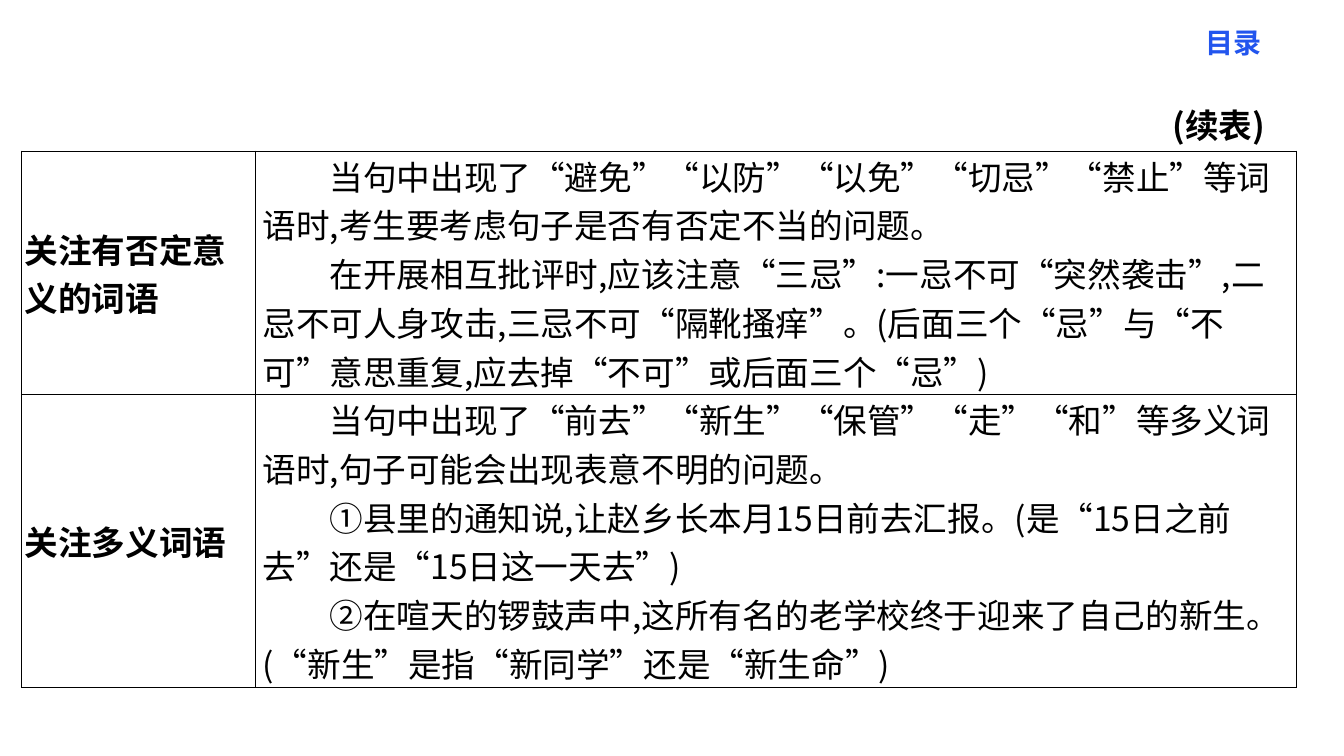
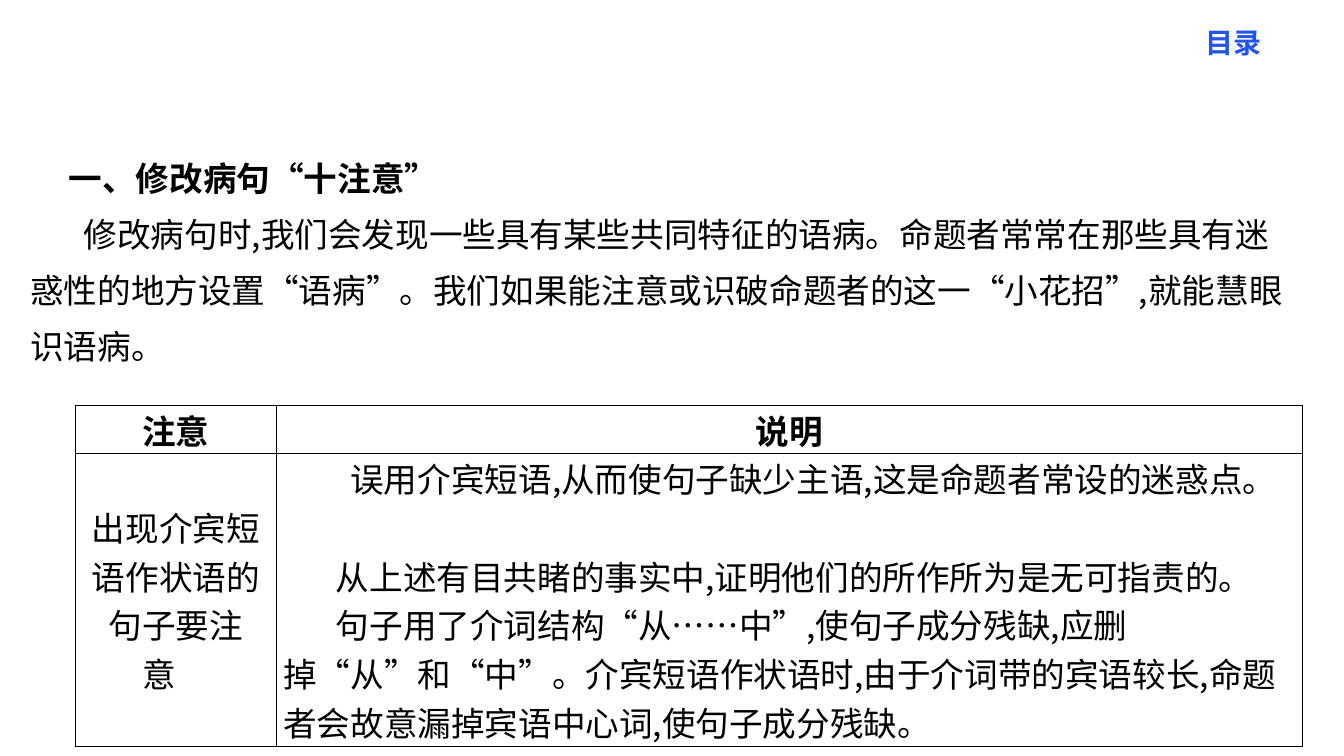
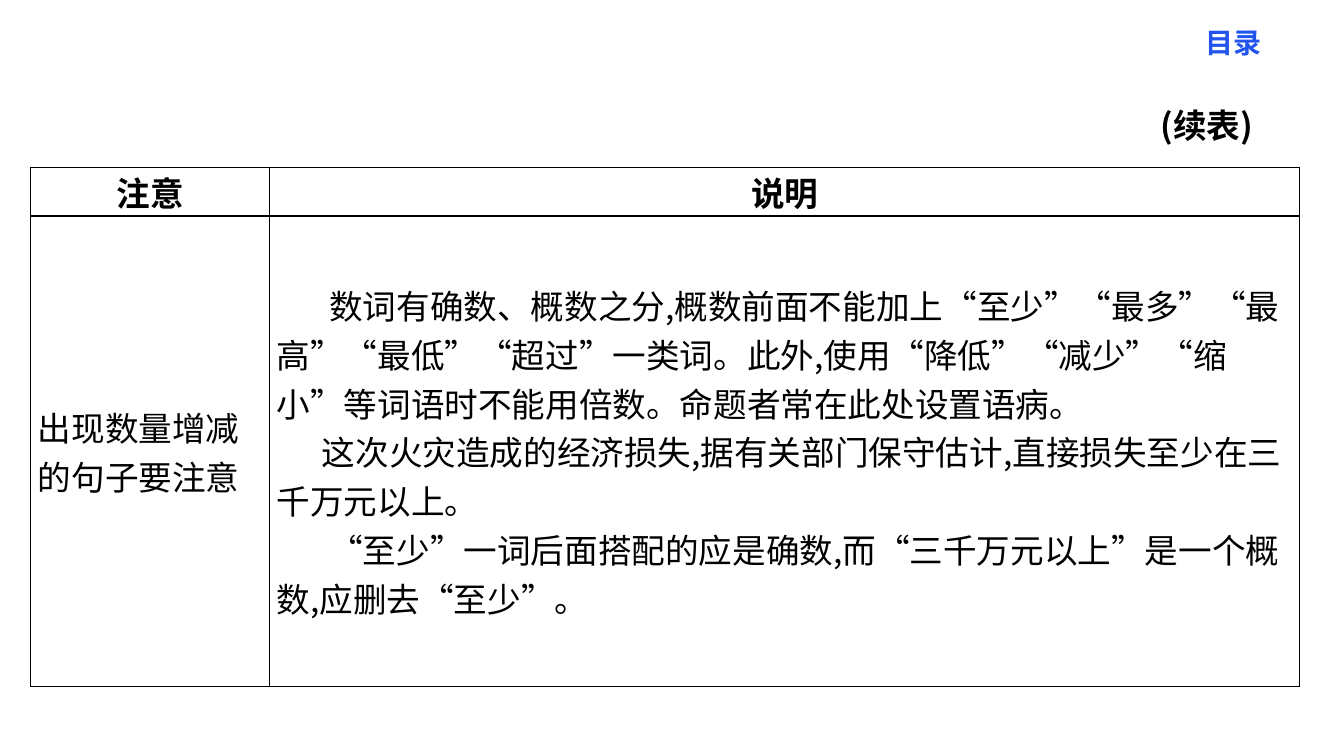
import pptx
import pptx.util
import pptx.dml.color
import pptx.enum.text
import pptx.enum.lang
import pptx.oxml
import pptx.oxml.ns

Pt = pptx.util.Pt
ALIGN = pptx.enum.text.PP_ALIGN
MIDDLE = pptx.enum.text.MSO_ANCHOR.MIDDLE
FONT, BLACK, BLUE = "Noto Sans CJK SC", "000000", "2255EE"
HEADER = ("注意", "说明")
LINE = 34.8

SLIDES = [
    dict(
        continued_right=903.5,
        table=dict(
            at=(15.5, 108), cols=(167, 743.8), rows=(5 * LINE, 6 * LINE),
            label=dict(bold=True), label_inset=2.16,
            cells=[
                ("关注有否定意义的词语", [
                    ("当句中出现了“避免”“以防”“以免”“切忌”“禁止”等词语时,考生要考虑句子是否有否定不当的问题。", dict(indent=48)),
                    ("在开展相互批评时,应该注意“三忌”:一忌不可“突然袭击”,二忌不可人身攻击,三忌不可“隔靴搔痒”。(后面三个“忌”与“不可”意思重复,应去掉“不可”或后面三个“忌”)", dict(indent=48)),
                ]),
                ("关注多义词语", [
                    ("当句中出现了“前去”“新生”“保管”“走”“和”等多义词语时,句子可能会出现表意不明的问题。", dict(indent=48)),
                    ("①县里的通知说,让赵乡长本月15日前去汇报。(是“15日之前去”还是“15日这一天去”)", dict(indent=48)),
                    ("②在喧天的锣鼓声中,这所有名的老学校终于迎来了自己的新生。(“新生”是指“新同学”还是“新生命”)", dict(indent=48)),
                ]),
            ],
        ),
    ),
    dict(
        intro=[
            ("一、修改病句“十注意”", dict(bold=True, indent=27.5, spacing=43.2)),
            ("修改病句时,我们会发现一些具有某些共同特征的语病。命题者常常在那些具有迷惑性的地方设置“语病”。我们如果能注意或识破命题者的这一“小花招”,就能慧眼识语病。",
             dict(indent=38.2, spacing=40)),
        ],
        table=dict(
            at=(54, 289.4), cols=(143.3, 733), rows=(LINE, 6 * LINE), header=True,
            label=dict(align=ALIGN.CENTER), label_inset=0,
            cells=[
                ("出现介宾短语作状语的句子要注意　", [
                    ("误用介宾短语,从而使句子缺少主语,这是命题者常设的迷惑点。", dict(indent=48, after=LINE)),
                    ("从上述有目共睹的事实中,证明他们的所作所为是无可指责的。", dict(indent=37.6)),
                    ("句子用了介词结构“从……中”,使句子成分残缺,应删掉“从”和“中”。介宾短语作状语时,由于介词带的宾语较长,命题者会故意漏掉宾语中心词,使句子成分残缺。", dict(indent=37.6)),
                ]),
            ],
        ),
    ),
    dict(
        continued_right=895,
        table=dict(
            at=(22, 119.5), cols=(170.6, 735.8), rows=(LINE, 336.2), header=True,
            label={}, label_inset=5.04,
            cells=[
                ("出现数量增减的句子要注意", [
                    ("数词有确数、概数之分,概数前面不能加上“至少”“最多”“最高”“最低”“超过”一类词。此外,使用“降低”“减少”“缩小”等词语时不能用倍数。命题者常在此处设置语病。", dict(indent=37.6)),
                    ("这次火灾造成的经济损失,据有关部门保守估计,直接损失至少在三千万元以上。", dict(indent=32.3)),
                    ("“至少”一词后面搭配的应是确数,而“三千万元以上”是一个概数,应删去“至少”。", dict(indent=37.6)),
                ]),
            ],
        ),
    ),
]


def rgb(value):
    """Turn a hex string into a colour."""
    return pptx.dml.color.RGBColor.from_string(value)


def write(tf, text, first=True, size=24, color=BLACK, bold=False,
          align=ALIGN.LEFT, indent=0, spacing=None, after=0):
    """Write one formatted paragraph into a text frame."""
    p = tf.paragraphs[0] if first else tf.add_paragraph()
    p.alignment = align
    if spacing:
        p.line_spacing = Pt(spacing)
    if after:
        p.space_after = Pt(after)
    if indent:
        p._p.get_or_add_pPr().set("indent", str(Pt(indent)))
    r = p.add_run()
    r.text = text
    r.font.size, r.font.bold, r.font.name = Pt(size), bold, FONT
    r.font.color.rgb = rgb(color)
    r.font.language_id = pptx.enum.lang.MSO_LANGUAGE_ID.SIMPLIFIED_CHINESE
    rPr = r._r.get_or_add_rPr()
    rPr.append(rPr.makeelement(pptx.oxml.ns.qn("a:ea"), {"typeface": FONT}))


def text_box(s, left, top, width, height):
    """Add a wrapping text box without insets and return its frame."""
    tf = s.shapes.add_textbox(Pt(left), Pt(top), Pt(width), Pt(height)).text_frame
    tf.word_wrap = True
    tf.margin_left = tf.margin_right = tf.margin_top = tf.margin_bottom = 0
    return tf


def write_all(tf, paragraphs):
    """Write a list of text and format pairs into a text frame."""
    for i, (text, style) in enumerate(paragraphs):
        write(tf, text, first=i == 0, **style)


def format_cell(cell, inset):
    """Give a cell its insets, empty fill and thin black borders."""
    cell.margin_left = cell.margin_right = Pt(inset)
    cell.margin_top = cell.margin_bottom = 0
    cell.vertical_anchor = MIDDLE
    tcPr = cell._tc.get_or_add_tcPr()
    for side in ("lnL", "lnR", "lnT", "lnB"):
        tcPr.append(pptx.oxml.parse_xml(
            f'<a:{side} {pptx.oxml.ns.nsdecls("a")} w="{Pt(1)}"><a:solidFill>'
            f'<a:srgbClr val="{BLACK}"/></a:solidFill></a:{side}>'))
    cell.fill.background()


def add_notes_table(s, at, cols, rows, cells, label, label_inset, header=False):
    """Add a two-column table of labels and explanations."""
    table = s.shapes.add_table(len(rows), len(cols), Pt(at[0]), Pt(at[1]),
                               Pt(sum(cols)), Pt(sum(rows))).table
    table.first_row = table.horz_banding = False
    for column, width in zip(table.columns, cols):
        column.width = Pt(width)
    for row, height in zip(table.rows, rows):
        row.height = Pt(height)
        for cell, inset in zip(row.cells, (label_inset, 5.04)):
            format_cell(cell, inset)
    if header:
        for i, title in enumerate(HEADER):
            write(table.cell(0, i).text_frame, title, bold=True, align=ALIGN.CENTER)
    for i, (name, paragraphs) in enumerate(cells, start=int(header)):
        write(table.cell(i, 0).text_frame, name, **label)
        write_all(table.cell(i, 1).text_frame, paragraphs)


def add_slide(prs, table, intro=(), continued_right=None):
    """Add one slide with the shared contents label and its own parts."""
    s = prs.slides.add_slide(prs.slide_layouts[6])
    tf = text_box(s, 853.2, 14.4, 56.2, 31.7)
    tf.vertical_anchor = MIDDLE
    write(tf, "目录", size=20, color=BLUE, bold=True, align=ALIGN.CENTER)
    if intro:
        write_all(text_box(s, 21.6, 98.6, 900, 296), intro)
    add_notes_table(s, **table)
    if continued_right:
        tf = text_box(s, continued_right - 150, 75, 150, 32)
        write(tf, "(续表)", bold=True, align=ALIGN.RIGHT)


def main():
    """Build and save the presentation."""
    prs = pptx.Presentation()
    prs.slide_width, prs.slide_height = Pt(960), Pt(540)
    for content in SLIDES:
        add_slide(prs, **content)
    prs.save("out.pptx")


if __name__ == "__main__":
    main()
